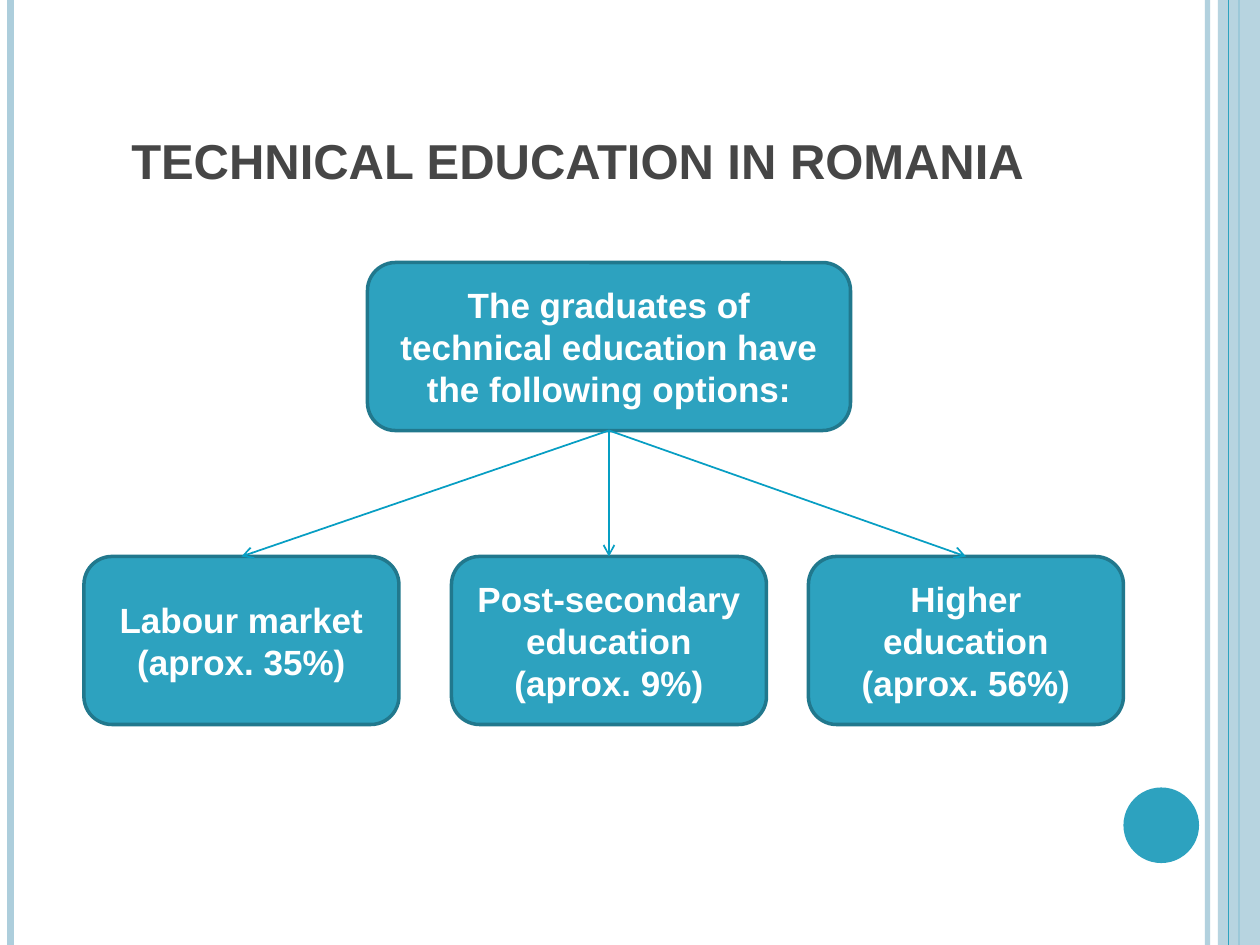
from dataclasses import dataclass

from lxml.etree import SubElement
from pptx import Presentation
from pptx.dml.color import RGBColor
from pptx.enum.shapes import MSO_CONNECTOR as Connector, MSO_SHAPE as Preset
from pptx.enum.text import MSO_ANCHOR as Anchor, PP_ALIGN as Align
from pptx.oxml.ns import qn
from pptx.util import Inches, Pt

# Grid of 120 columns by 90 rows, one twelfth of an inch each
COLUMNS, ROWS = 120, 90
CELL = Inches(1) // 12

WHITE = RGBColor(0xFF, 0xFF, 0xFF)
TITLE_GREY = RGBColor(0x46, 0x46, 0x46)
TEAL = RGBColor(0x2D, 0xA2, 0xBF)
DARK_TEAL = RGBColor(0x21, 0x78, 0x8D)
ARROW_TEAL = RGBColor(0x07, 0x9E, 0xC3)
PALE_TEAL = RGBColor(0xAD, 0xCE, 0xDC)

BOTTOM, TOP = 2, 0


@dataclass(frozen=True)
class Area:
    column: float
    row: float
    width: float
    height: float

    def lengths(self) -> list[int]:
        return [round(n * CELL) for n in (self.column, self.row, self.width, self.height)]


@dataclass(frozen=True)
class Stripe:
    column: float
    color: RGBColor
    weight: float
    opacity: int = 100


@dataclass(frozen=True)
class Box:
    area: Area
    paragraphs: tuple[str, ...]


TITLE_AREA = Area(6, 3.6, 98, 15)
BAND_AREA = Area(116, 0, 4, ROWS)
DISC_AREA = Area(107, 75, 7.2, 7.2)

STRIPES_BEHIND_BAND = (
    Stripe(115, PALE_TEAL, 3, 93),
    Stripe(1, PALE_TEAL, 4.5),
    Stripe(118, TEAL, 1.5),
)
STRIPE_ON_BAND = Stripe(117, TEAL, 0.75)

GRADUATES = Box(
    Area(35, 25, 46, 16),
    ("The graduates of technical education have the following options:",),
)
OPTIONS = (
    Box(Area(8, 53, 30, 16), ("Labour market", "(aprox. 35%)")),
    Box(Area(43, 53, 30, 16), ("Post-secondary education", "(aprox. 9%)")),
    Box(Area(77, 53, 30, 16), ("Higher education", "(aprox. 56%)")),
)


def set_opacity(fill_parent, percent: int) -> None:
    """Make the solid fill directly below the given element translucent."""
    color = fill_parent.find(f"{qn('a:solidFill')}/{qn('a:srgbClr')}")
    SubElement(color, qn("a:alpha"), val=str(percent * 1000))


def write_text(shape, paragraphs, *, size: float, color: RGBColor, anchor=Anchor.MIDDLE) -> None:
    frame = shape.text_frame
    frame.word_wrap = True
    frame.vertical_anchor = anchor
    frame.text = "\n".join(paragraphs)
    for paragraph in frame.paragraphs:
        paragraph.alignment = Align.CENTER
        font = paragraph.runs[0].font
        font.name, font.size, font.bold = "Arial", Pt(size), True
        font.color.rgb = color


def add_filled(slide, preset, area: Area, color: RGBColor):
    shape = slide.shapes.add_shape(preset, *area.lengths())
    shape.shadow.inherit = False
    shape.fill.solid()
    shape.fill.fore_color.rgb = color
    shape.line.fill.background()
    return shape


def add_line(slide, color: RGBColor, weight: float, ends=(0, 0, 0, 0)):
    line = slide.shapes.add_connector(Connector.STRAIGHT, *ends)
    line.line.color.rgb = color
    line.line.width = Pt(weight)
    SubElement(line._element.spPr, qn("a:effectLst"))
    return line


def add_stripe(slide, stripe: Stripe) -> None:
    x = round(stripe.column * CELL)
    line = add_line(slide, stripe.color, stripe.weight, (x, 0, x, ROWS * CELL))
    if stripe.opacity < 100:
        set_opacity(line.line._ln, stripe.opacity)


def add_box(slide, box: Box):
    shape = add_filled(slide, Preset.ROUNDED_RECTANGLE, box.area, TEAL)
    shape.line.color.rgb = DARK_TEAL
    shape.line.width = Pt(2)
    write_text(shape, box.paragraphs, size=20, color=WHITE)
    return shape


def add_arrow(slide, source, target) -> None:
    arrow = add_line(slide, ARROW_TEAL, 1)
    arrow.begin_connect(source, BOTTOM)
    arrow.end_connect(target, TOP)
    SubElement(arrow.line._ln, qn("a:tailEnd"), type="arrow")


def add_decoration(slide) -> None:
    for stripe in STRIPES_BEHIND_BAND:
        add_stripe(slide, stripe)
    band = add_filled(slide, Preset.RECTANGLE, BAND_AREA, PALE_TEAL)
    set_opacity(band._element.spPr, 87)
    add_stripe(slide, STRIPE_ON_BAND)
    add_filled(slide, Preset.OVAL, DISC_AREA, TEAL)


def main() -> None:
    deck = Presentation()
    deck.slide_width, deck.slide_height = COLUMNS * CELL, ROWS * CELL
    slide = deck.slides.add_slide(deck.slide_layouts[6])

    add_decoration(slide)
    title = slide.shapes.add_textbox(*TITLE_AREA.lengths())
    write_text(title, ["TECHNICAL EDUCATION IN ROMANIA"],
               size=28, color=TITLE_GREY, anchor=Anchor.BOTTOM)

    graduates = add_box(slide, GRADUATES)
    options = [add_box(slide, option) for option in OPTIONS]
    for option in options:
        add_arrow(slide, graduates, option)

    deck.save("out.pptx")


if __name__ == "__main__":
    main()
